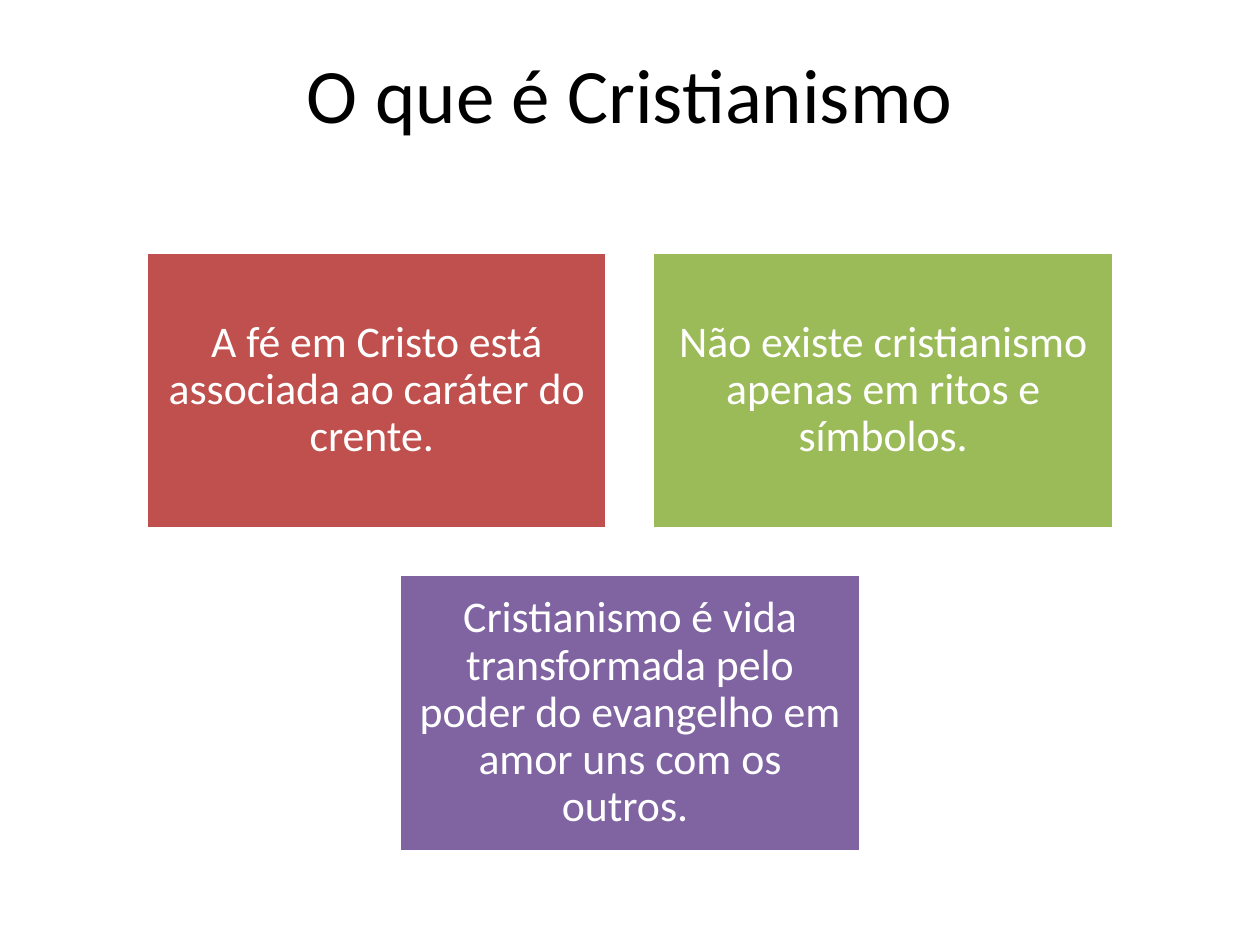
from pptx import Presentation
from pptx.dml.color import RGBColor
from pptx.enum.shapes import MSO_SHAPE
from pptx.enum.text import MSO_ANCHOR, PP_ALIGN
from pptx.util import Inches, Pt

CARDS = [
    ("A fé em Cristo está associada ao caráter do crente. ", "C0504D"),
    ("Não existe cristianismo apenas em ritos e símbolos.", "9BBB59"),
    ("Cristianismo é vida transformada pelo poder do evangelho em amor uns com os outros. ", "8064A2"),
]
COLUMNS = 2


def color(value):
    return RGBColor.from_string(value)


def write_text(shape, text, size, fill, anchor, inset_x=0.1, inset_y=0.1):
    frame = shape.text_frame
    frame.word_wrap = True
    frame.vertical_anchor = anchor
    frame.margin_left = frame.margin_right = Inches(inset_x)
    frame.margin_top = frame.margin_bottom = Inches(inset_y)
    para = frame.paragraphs[0]
    para.alignment = PP_ALIGN.CENTER
    para.line_spacing = 0.9
    span = para.add_run()
    span.text = text
    span.font.name = "Calibri"
    span.font.size = Pt(size)
    span.font.color.rgb = color(fill)


def add_title(page, left, top, width, height):
    box = page.shapes.add_textbox(left, top, width, height)
    write_text(box, "O que é Cristianismo", size=44, fill="000000",
               anchor=MSO_ANCHOR.TOP, inset_y=0.05)


def add_card(page, left, top, width, height, text, fill):
    card = page.shapes.add_shape(MSO_SHAPE.RECTANGLE, left, top, width, height)
    card.shadow.inherit = False
    card.fill.solid()
    card.fill.fore_color.rgb = color(fill)
    card.line.color.rgb = color("FFFFFF")
    card.line.width = Pt(2)
    write_text(card, text, size=25, fill="FFFFFF", anchor=MSO_ANCHOR.MIDDLE)


def add_card_grid(page, left, top, width, height):
    gap = Inches(0.36)
    card_width = (width - gap) // COLUMNS
    card_height = (height - gap) // 2
    for first in range(0, len(CARDS), COLUMNS):
        row = CARDS[first:first + COLUMNS]
        row_width = len(row) * (card_width + gap) - gap
        row_left = left + (width - row_width) // 2
        row_top = top + first // COLUMNS * (card_height + gap)
        for column, (text, fill) in enumerate(row):
            add_card(page, row_left + column * (card_width + gap), row_top,
                     card_width, card_height, text, fill)


def main():
    deck = Presentation()
    deck.slide_width = Inches(10)
    deck.slide_height = Inches(7.5)
    page = deck.slides.add_slide(deck.slide_layouts[6])
    add_title(page, Inches(0.69), Inches(0.4), Inches(8.62), Inches(1.45))
    add_card_grid(page, Inches(1.16), Inches(2), Inches(7.68), Inches(4.76))
    deck.save("out.pptx")


if __name__ == "__main__":
    main()
